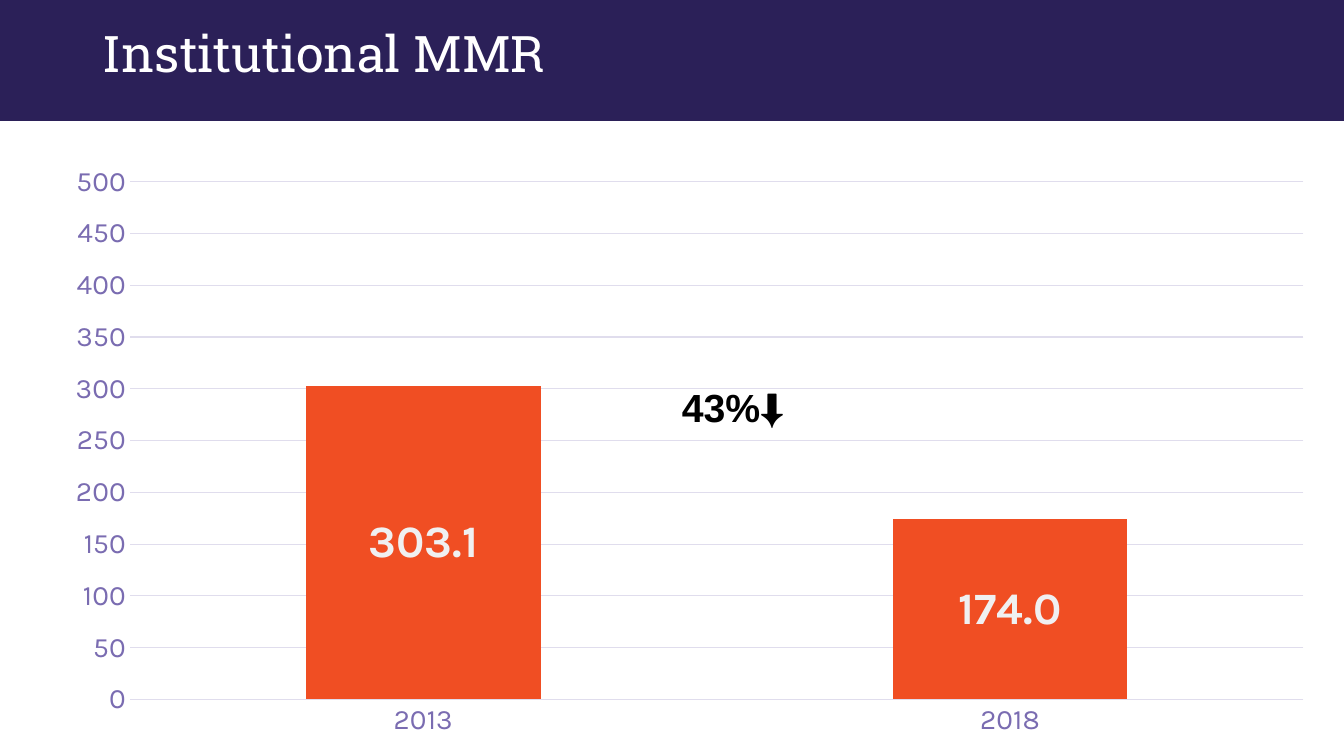
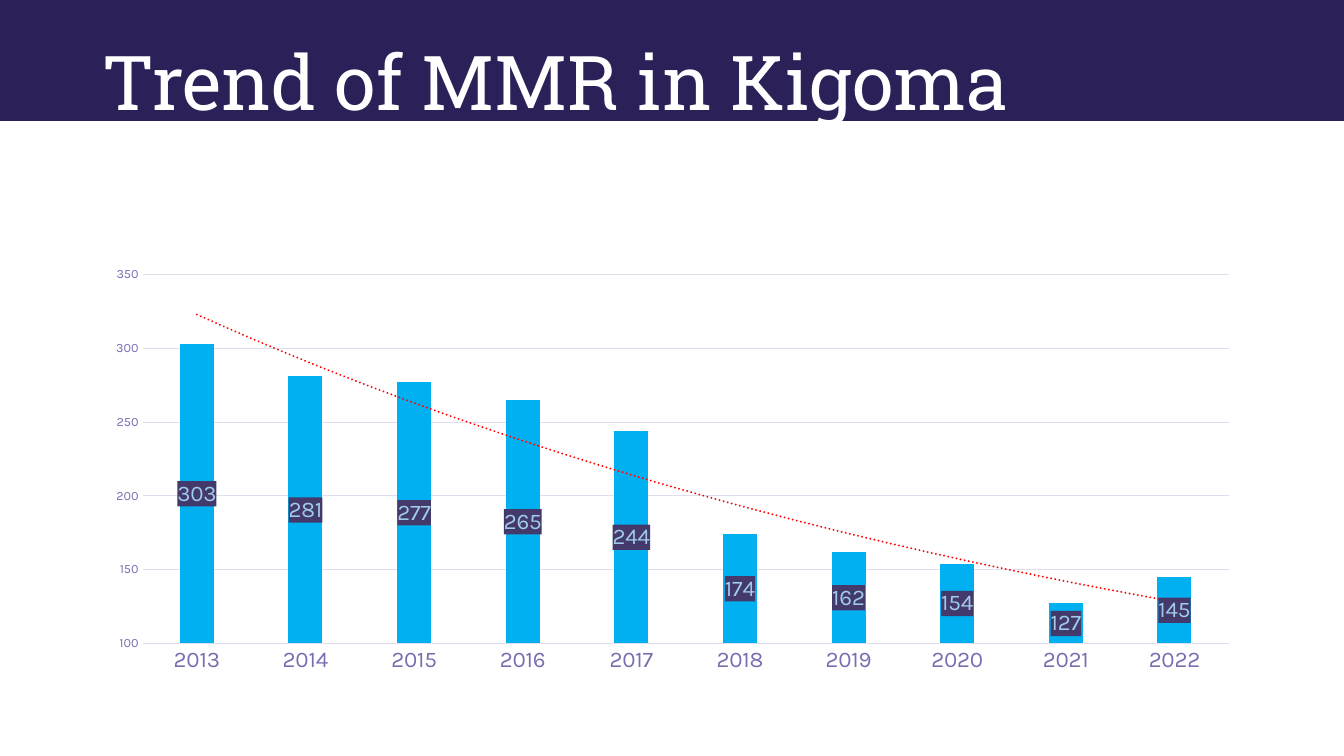
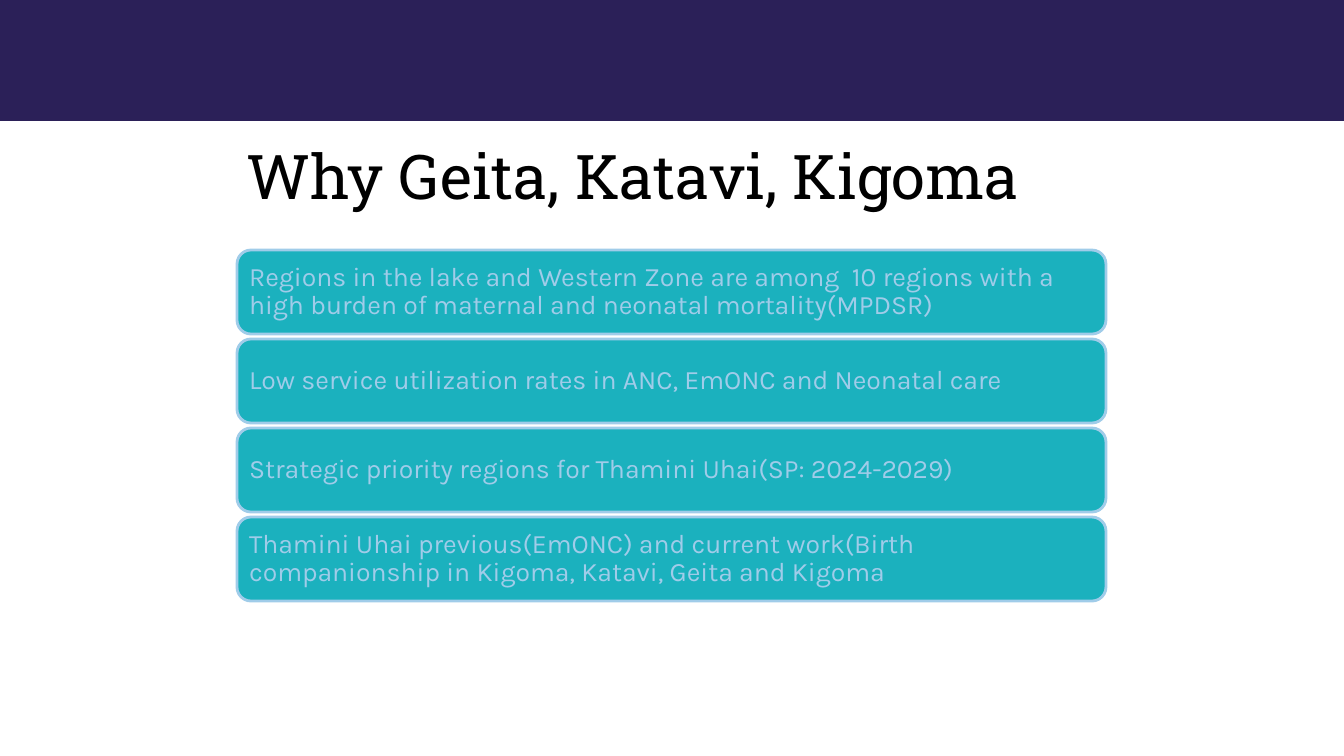
from lxml import etree
from pptx import Presentation
from pptx import util as u
from pptx.chart.data import CategoryChartData
from pptx.dml.color import RGBColor
from pptx.enum import chart as ch, shapes, text
from pptx.oxml import parse_xml
from pptx.oxml.ns import nsdecls, qn

# Shared look
WIDE, HIGH = 1344, 756
BAND_H = 121
NAVY = RGBColor(0x2B, 0x20, 0x58)
WHITE = RGBColor(0xFF, 0xFF, 0xFF)
BLACK = RGBColor(0, 0, 0)
PLUM = RGBColor(0x43, 0x39, 0x6B)
LILAC = RGBColor(0x7A, 0x6C, 0xB1)
GRID = RGBColor(0xE0, 0xDD, 0xED)
ORANGE = RGBColor(0xF0, 0x4E, 0x23)
PALE = RGBColor(0xF0, 0xF0, 0xF1)
BLUE = RGBColor(0x00, 0xB0, 0xF0)
SKY = RGBColor(0xA0, 0xCC, 0xE9)
TEAL = RGBColor(0x1B, 0xB1, 0xBE)
RED = RGBColor(0xFF, 0, 0)
HEAD, BODY = "Roboto Slab", "Karla"

REASONS = [
    "Regions in the lake and Western Zone are among  10 regions with a "
    "high burden of maternal and neonatal mortality(MPDSR)",
    "Low service utilization rates in ANC, EmONC and Neonatal care",
    "Strategic priority regions for Thamini Uhai(SP: 2024-2029)",
    "Thamini Uhai previous(EmONC) and current work(Birth "
    "companionship in Kigoma, Katavi, Geita and Kigoma",
]


def px(*nums):
    """Turn whole pixels into EMU."""
    return [u.Emu(round(n * 12192000 / WIDE)) for n in nums]


def style(font, size, color, name=BODY, bold=False):
    font.size, font.name, font.bold = u.Pt(size), name, bold
    font.color.rgb = color


def block(slide, kind, box, fill):
    shape = slide.shapes.add_shape(kind, *px(*box))
    shape.shadow.inherit = False
    shape.fill.solid()
    shape.fill.fore_color.rgb = fill
    shape.line.fill.background()
    return shape


def label(slide, words, box, size, color, name, bold=False):
    frame = slide.shapes.add_textbox(*px(*box)).text_frame
    frame.word_wrap = True
    para = frame.paragraphs[0]
    para.text = words
    style(para.font, size, color, name, bold)
    return frame


def page(prs, title, box, size, color=WHITE):
    """Add a blank slide with the top band and a title."""
    slide = prs.slides.add_slide(prs.slide_layouts[6])
    block(slide, shapes.MSO_SHAPE.RECTANGLE, (0, 0, WIDE, BAND_H), NAVY)
    frame = label(slide, title, box, size, color, HEAD)
    frame.vertical_anchor = text.MSO_ANCHOR.MIDDLE
    frame.paragraphs[0].line_spacing = 0.9
    return slide


def rule(line):
    line.color.rgb = GRID
    line.width = u.Pt(0.75)


def columns(slide, kind, box, data, fill, gap, lap, sizes, span):
    """Add a one-series column chart; sizes are for the two axes."""
    source = CategoryChartData()
    source.categories = list(data)
    source.add_series("Series 1", data.values())
    chart = slide.shapes.add_chart(kind, *px(*box), source).chart
    chart.has_legend = chart.has_title = False
    style(chart.font, sizes[0], PLUM)

    for axis, size in zip((chart.category_axis, chart.value_axis), sizes):
        axis.major_tick_mark = axis.minor_tick_mark = ch.XL_TICK_MARK.NONE
        style(axis.tick_labels.font, size, LILAC)
    rule(chart.category_axis.format.line)
    value = chart.value_axis
    value.format.line.fill.background()
    value.has_major_gridlines = True
    rule(value.major_gridlines.format.line)
    value.minimum_scale, value.maximum_scale = span
    value.major_unit = 50
    value.tick_labels.number_format = "#,##0"
    value.tick_labels.number_format_is_linked = False

    plot = chart.plots[0]
    plot.gap_width, plot.overlap = gap, lap
    plot.vary_by_categories = False
    series = plot.series[0]
    series.invert_if_negative = False
    series.format.fill.solid()
    series.format.fill.fore_color.rgb = fill
    return series


def tags(series, size, color, form, bold=False):
    marks = series.data_labels
    style(marks.font, size, color, bold=bold)
    marks.show_value = True
    marks.number_format = form
    marks.number_format_is_linked = False
    marks.position = ch.XL_LABEL_POSITION.CENTER


def back(series, color):
    """Fill the boxes behind the data labels."""
    node = series._element.find(qn("c:dLbls"))
    node.find(qn("c:txPr")).addprevious(parse_xml(
        f'<c:spPr {nsdecls("c", "a")}><a:solidFill>'
        f'<a:srgbClr val="{color}"/></a:solidFill></c:spPr>'))


def trend(series, color):
    """Add a dotted exponential trend line."""
    line = parse_xml(
        f'<c:trendline {nsdecls("c", "a")}><c:spPr>'
        f'<a:ln w="{u.Pt(1.5)}" cap="rnd"><a:solidFill>'
        f'<a:srgbClr val="{color}"/></a:solidFill>'
        '<a:prstDash val="sysDot"/></a:ln></c:spPr>'
        '<c:trendlineType val="exp"/><c:dispRSqr val="0"/>'
        '<c:dispEq val="0"/></c:trendline>')
    series._element.find(qn("c:cat")).addprevious(line)


def card(slide, words, box):
    shape = block(slide, shapes.MSO_SHAPE.ROUNDED_RECTANGLE, box, TEAL)
    shape.line.color.rgb = SKY
    shape.line.width = u.Pt(2)
    frame = shape.text_frame
    frame.word_wrap = True
    frame.vertical_anchor = text.MSO_ANCHOR.MIDDLE
    frame.margin_left, frame.margin_right = px(8, 8)
    para = frame.paragraphs[0]
    para.text = words
    para.alignment = text.PP_ALIGN.LEFT
    para.line_spacing = 0.9
    style(para.font, 19, SKY)


def main():
    prs = Presentation()
    prs.slide_width, prs.slide_height = px(WIDE, HIGH)

    # Two-year comparison
    slide = page(prs, "Institutional MMR", (93, 7, 1159, 98), 36)
    series = columns(slide, ch.XL_CHART_TYPE.COLUMN_STACKED,
                     (50, 153, 1279, 596), {"2013": 303.1, "2018": 174},
                     ORANGE, 150, 100, (20, 20), (0, 500))
    tags(series, 32, PALE, "#,##0.0", True)
    label(slide, "43%⬇", (672, 378, 134, 57), 28, BLACK, "Arial", True)

    # Yearly trend
    slide = page(prs, "Trend of MMR in Kigoma", (93, 13, 1159, 146), 54)
    rates = (303, 281, 277, 265, 244, 174, 162, 154, 127, 145)
    years = {str(2013 + i): rate for i, rate in enumerate(rates)}
    series = columns(slide, ch.XL_CHART_TYPE.COLUMN_CLUSTERED,
                     (93, 259, 1159, 422), years,
                     BLUE, 219, -27, (16, 9), (100, 350))
    tags(series, 16, SKY, "General")
    back(series, PLUM)
    trend(series, RED)

    # Reasons
    left, wide, high, gap = 237, 869, 84, 5
    slide = page(prs, "Why Geita, Katavi, Kigoma",
                 (left, 125, wide, 110), 44, BLACK)
    for i, words in enumerate(REASONS):
        card(slide, words, (left, 250 + i * (high + gap), wide, high))

    prs.save("out.pptx")


if __name__ == "__main__":
    main()
